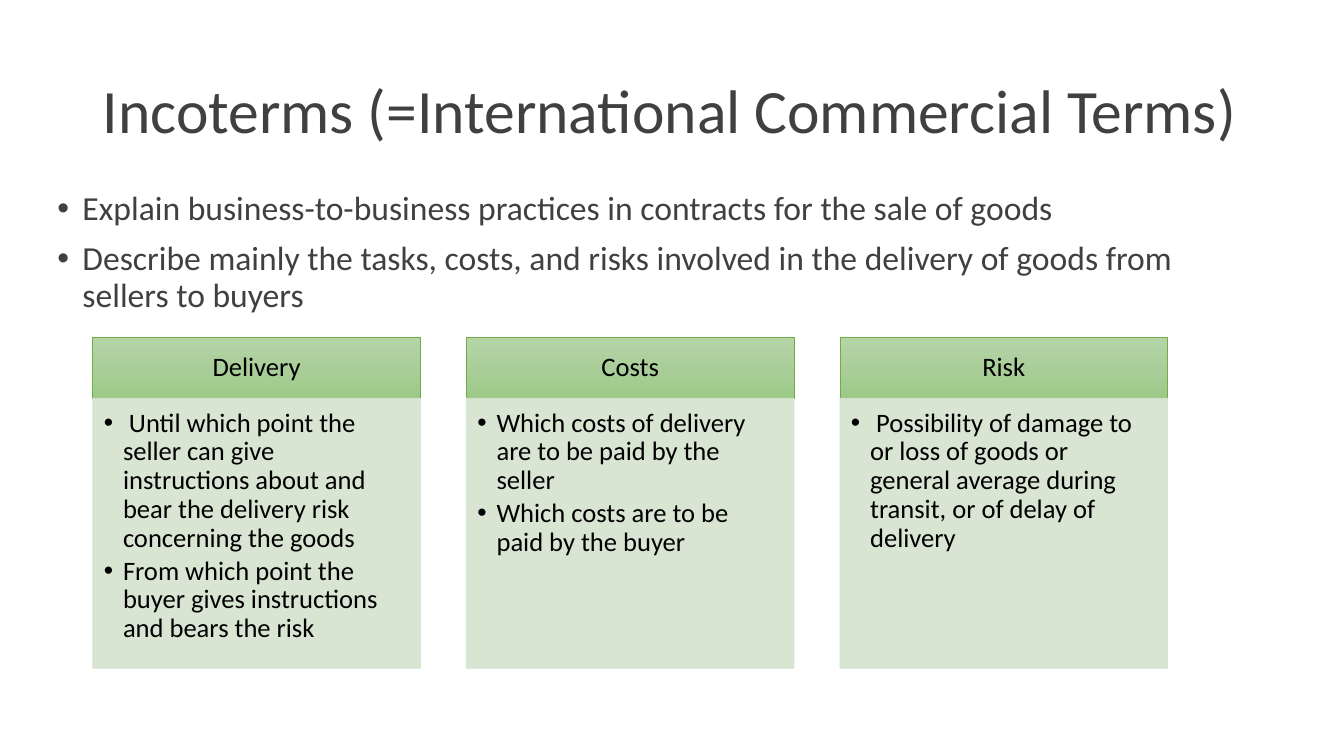
from copy import deepcopy
from dataclasses import dataclass

from lxml.etree import SubElement
from pptx import Presentation
from pptx.dml.color import RGBColor
from pptx.enum.shapes import MSO_SHAPE
from pptx.enum.text import MSO_ANCHOR, MSO_AUTO_SIZE, PP_ALIGN
from pptx.oxml.ns import qn
from pptx.util import Inches, Pt


@dataclass(frozen=True)
class Theme:
    font: str = "Calibri"
    heading: str = "404041"
    text: str = "000000"
    header_stops: tuple = ((0, "B5D5A7"), (0.5, "AACE9A"), (1, "9CC987"))
    header_line: str = "70AD47"
    panel: str = "D5E3CF"
    panel_alpha: int = 90000
    title_size: int = 44
    point_size: int = 24
    card_size: int = 19


THEME = Theme()

TITLE = "Incoterms (=International Commercial Terms)"
POINTS = [
    "Explain business-to-business practices in contracts for the sale of goods",
    "Describe mainly the tasks, costs, and risks involved in the delivery of goods from sellers to buyers",
]
CARDS = [
    ("Delivery", [
        " Until which point the seller can give instructions about and bear the delivery risk concerning the goods",
        "From which point the buyer gives instructions and bears the risk",
    ]),
    ("Costs", [
        "Which costs of delivery are to be paid by the seller",
        "Which costs are to be paid by the buyer",
    ]),
    ("Risk", [
        " Possibility of damage to or loss of goods or general average during transit, or of delay of delivery",
    ]),
]

CARD_LEFT, CARD_TOP, CARD_WIDTH, CARD_PITCH = 0.92, 3.35, 3.25, 3.705
HEADER_HEIGHT, PANEL_HEIGHT = 0.6, 2.68


def rgb(value):
    return RGBColor.from_string(value)


def set_frame(frame, anchor, margins=(0.1, 0.05, 0.1, 0.05)):
    frame.word_wrap = True
    frame.auto_size = MSO_AUTO_SIZE.NONE
    frame.vertical_anchor = anchor
    (frame.margin_left, frame.margin_top,
     frame.margin_right, frame.margin_bottom) = map(Inches, margins)


def write_run(paragraph, text, size, color, align=PP_ALIGN.LEFT):
    paragraph.alignment = align
    paragraph.line_spacing = 0.9
    run = paragraph.add_run()
    run.text = text
    run.font.name = THEME.font
    run.font.size = Pt(size)
    run.font.color.rgb = rgb(color)


def add_bullet(paragraph, indent):
    properties = paragraph._p.get_or_add_pPr()
    properties.set("marL", str(Inches(indent)))
    properties.set("indent", str(-Inches(indent)))
    SubElement(properties, qn("a:buFont")).set("typeface", "Arial")
    SubElement(properties, qn("a:buChar")).set("char", "•")


def write_bullets(frame, items, size, color, indent, gap):
    for index, item in enumerate(items):
        paragraph = frame.add_paragraph() if index else frame.paragraphs[0]
        add_bullet(paragraph, indent)
        paragraph.space_before = Pt(gap if index else 0)
        write_run(paragraph, item, size, color)


def add_box(slide, left, top, height, line_color):
    box = slide.shapes.add_shape(
        MSO_SHAPE.RECTANGLE, Inches(left), Inches(top), Inches(CARD_WIDTH), Inches(height))
    box.shadow.inherit = False
    box.line.color.rgb = rgb(line_color)
    box.line.width = Pt(0.5)
    return box


def fill_gradient(box):
    box.fill.gradient()
    box.fill.gradient_angle = 270
    stop_list = box._element.spPr.find(qn("a:gradFill")).find(qn("a:gsLst"))
    stop_list.insert(1, deepcopy(stop_list[0]))
    for stop, (position, color) in zip(box.fill.gradient_stops, THEME.header_stops):
        stop.position = position
        stop.color.rgb = rgb(color)


def fill_panel(box):
    box.fill.solid()
    box.fill.fore_color.rgb = rgb(THEME.panel)
    for color in box._element.spPr.iter(qn("a:srgbClr")):
        SubElement(color, qn("a:alpha")).set("val", str(THEME.panel_alpha))


def add_title(slide):
    title = slide.shapes.title
    title.left, title.top, title.width, title.height = map(Inches, (0.92, 0.4, 11.5, 1.45))
    set_frame(title.text_frame, MSO_ANCHOR.MIDDLE)
    write_run(title.text_frame.paragraphs[0], TITLE, THEME.title_size, THEME.heading)


def add_points(slide):
    points = slide.shapes.add_textbox(*map(Inches, (0.47, 1.85, 11.7, 1.4)))
    set_frame(points.text_frame, MSO_ANCHOR.TOP)
    write_bullets(points.text_frame, POINTS, THEME.point_size, THEME.heading, 0.25, 10)


def add_card(slide, left, heading, items):
    header = add_box(slide, left, CARD_TOP, HEADER_HEIGHT, THEME.header_line)
    fill_gradient(header)
    set_frame(header.text_frame, MSO_ANCHOR.MIDDLE, (0.15, 0.08, 0.15, 0.08))
    write_run(header.text_frame.paragraphs[0], heading, THEME.card_size, THEME.text, PP_ALIGN.CENTER)

    panel = add_box(slide, left, CARD_TOP + HEADER_HEIGHT, PANEL_HEIGHT, THEME.panel)
    fill_panel(panel)
    set_frame(panel.text_frame, MSO_ANCHOR.TOP, (0.11, 0.11, 0.15, 0.17))
    write_bullets(panel.text_frame, items, THEME.card_size, THEME.text, 0.19, 3)


def main():
    deck = Presentation()
    deck.slide_width, deck.slide_height = Inches(13.33), Inches(7.5)
    slide = deck.slides.add_slide(deck.slide_layouts[5])
    add_title(slide)
    add_points(slide)
    for column, (heading, items) in enumerate(CARDS):
        add_card(slide, CARD_LEFT + column * CARD_PITCH, heading, items)
    deck.save("out.pptx")


if __name__ == "__main__":
    main()
